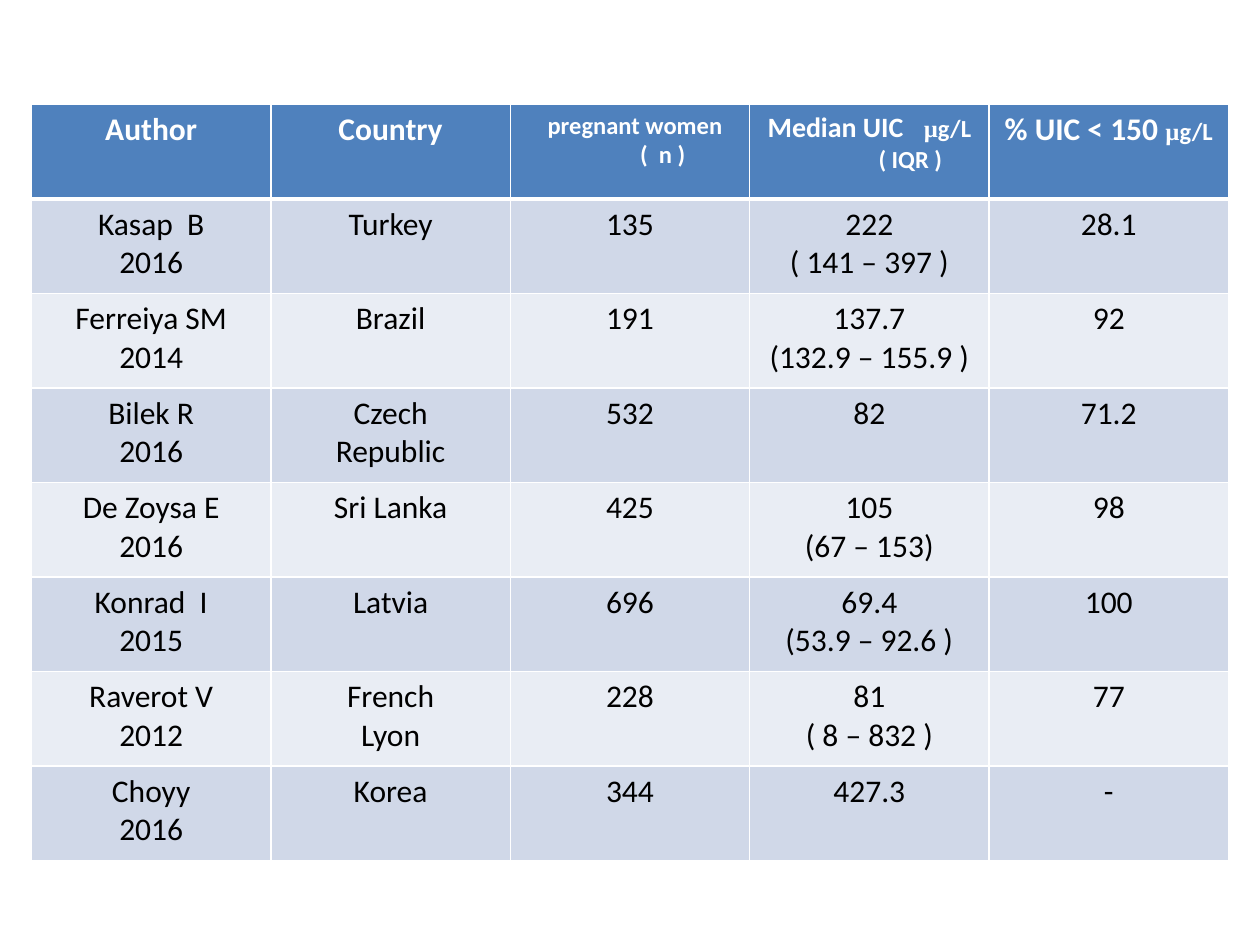
from lxml import etree
from pptx import Presentation
from pptx import util as u
from pptx.dml import color
from pptx.enum import text
from pptx.oxml import ns

COLORS = {"header": "4F81BD", "odd": "D0D8E8", "even": "E9EDF4",
          "light": "FFFFFF", "dark": "000000"}
MICRO = [("µ", {"size": 14, "font": "Times New Roman"}), ("g/L", {"size": 14})]


def write(paragraph, words, size=18, font="Calibri", shade="dark", bold=False, spacing=0):
    run = paragraph.add_run()
    run.text = words
    run.font.size = u.Pt(size)
    run.font.name = font
    run.font.bold = bold
    run.font.color.rgb = color.RGBColor.from_string(COLORS[shade])
    if spacing:
        run.font._element.set("spc", str(spacing * 100))


def add_borders(cell, bottom):
    properties = cell._tc.get_or_add_tcPr()
    widths = {"lnL": 1, "lnR": 1, "lnT": 1, "lnB": bottom}
    for position, (side, width) in enumerate(widths.items()):
        line = etree.Element(ns.qn(f"a:{side}"), w=str(u.Pt(width)))
        solid = etree.SubElement(line, ns.qn("a:solidFill"))
        etree.SubElement(solid, ns.qn("a:srgbClr"), val=COLORS["light"])
        properties.insert(position, line)


headers = [
    [(0, [("Author", {})])],
    [(0, [("Country", {})])],
    [(0.08, [("pregnant women", {"size": 14})]),
     (0.52, [("(  n )", {"size": 14})])],
    [(0, [("Median UIC", {"size": 16}), (" ", {"size": 16, "spacing": 8})] + MICRO),
     (0.65, [("( IQR )", {"size": 14})])],
    [(0, [("% UIC < 150 ", {})] + MICRO)],
]
studies = [
    ("Kasap  B\n2016", "Turkey", "135", "222\n( 141 – 397 )", "28.1"),
    ("Ferreiya SM\n2014", "Brazil", "191", "137.7\n(132.9 – 155.9 )", "92"),
    ("Bilek R\n2016", "Czech\nRepublic", "532", "82", "71.2"),
    ("De Zoysa E\n2016", "Sri Lanka", "425", "105\n(67 – 153)", "98"),
    ("Konrad  I\n2015", "Latvia", "696", "69.4\n(53.9 – 92.6 )", "100"),
    ("Raverot V\n2012", "French\nLyon", "228", "81\n( 8 – 832 )", "77"),
    ("Choyy\n2016", "Korea", "344", "427.3", "-"),
]
rows = [headers] + [
    [[(0, [(line, {})]) for line in value.split("\n")] for value in study]
    for study in studies
]

prs = Presentation()
prs.slide_width = u.Inches(10)
prs.slide_height = u.Inches(7.5)
slide = prs.slides.add_slide(prs.slide_layouts[6])
table = slide.shapes.add_table(len(rows), len(headers), u.Inches(0.25), u.Inches(0.83),
                               u.Inches(9.5), u.Inches(6)).table
for column in table.columns:
    column.width = u.Inches(1.9)

for r, row in enumerate(rows):
    table.rows[r].height = u.Inches(0.75)
    is_header = r == 0
    band = "header" if is_header else "odd" if r % 2 else "even"
    for c, lines in enumerate(row):
        cell = table.cell(r, c)
        cell.fill.solid()
        cell.fill.fore_color.rgb = color.RGBColor.from_string(COLORS[band])
        add_borders(cell, bottom=3 if is_header else 1)
        for i, (indent, pieces) in enumerate(lines):
            paragraph = cell.text_frame.add_paragraph() if i else cell.text_frame.paragraphs[0]
            paragraph.alignment = text.PP_ALIGN.CENTER
            if indent:
                paragraph._p.get_or_add_pPr().set("marL", str(u.Inches(indent)))
            for words, style in pieces:
                write(paragraph, words, shade="light" if is_header else "dark",
                      bold=is_header, **style)

prs.save("out.pptx")
